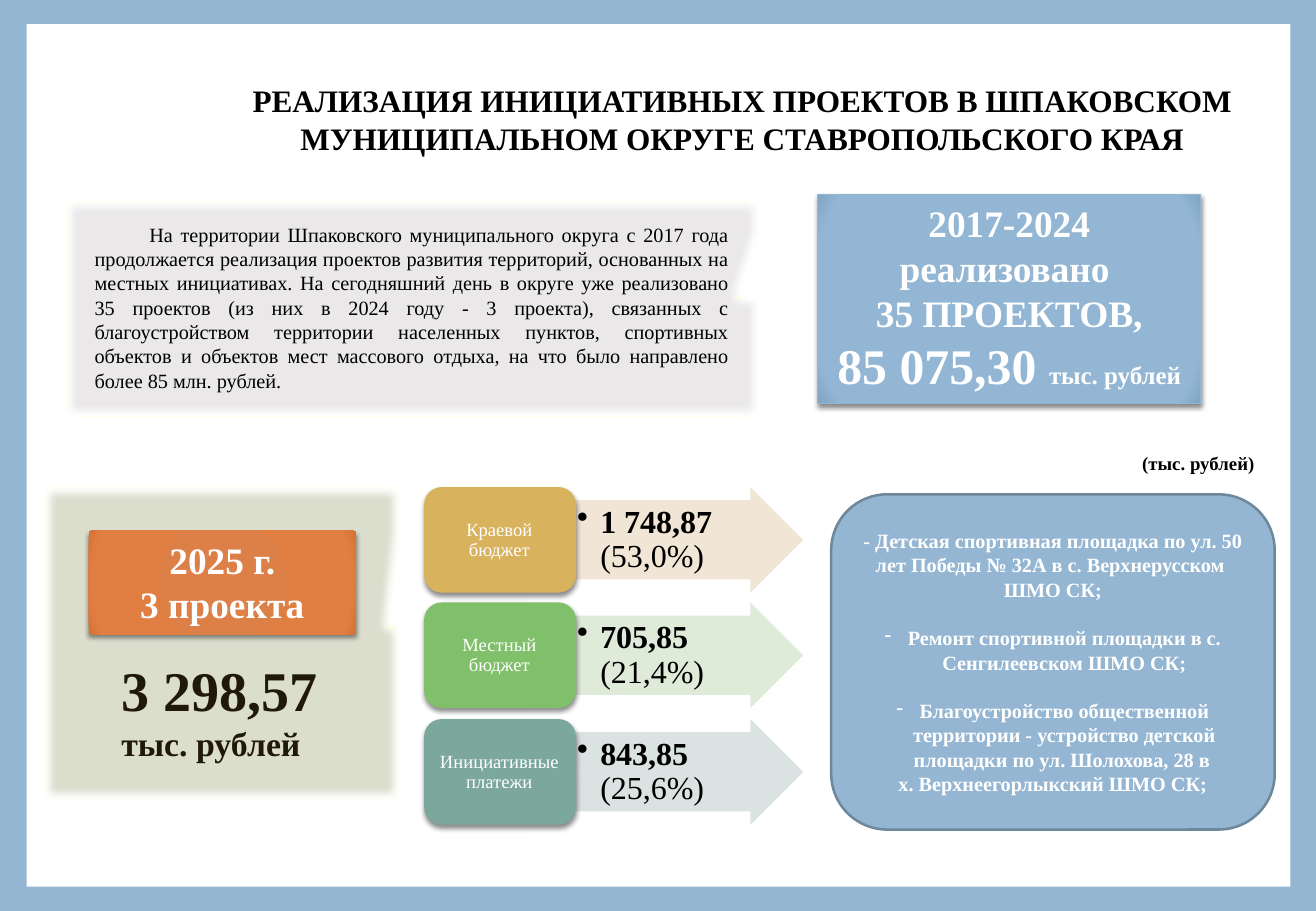
from dataclasses import dataclass

from lxml.etree import SubElement
from pptx import Presentation
from pptx.dml.color import RGBColor
from pptx.enum.shapes import MSO_SHAPE
from pptx.enum.text import MSO_ANCHOR, PP_ALIGN
from pptx.oxml import parse_xml
from pptx.oxml.ns import nsdecls, qn
from pptx.util import Emu, Pt

SCALE = 9144
FONT = "Times New Roman"
BLACK = RGBColor(0x00, 0x00, 0x00)
WHITE = RGBColor(0xFF, 0xFF, 0xFF)
YELLOW = RGBColor(0xFF, 0xFF, 0x00)
BROWN = RGBColor(0x20, 0x19, 0x0B)
BLUE = RGBColor(0x94, 0xB6, 0xD2)
BLUE_MIDDLE = RGBColor(0x92, 0xB6, 0xD4)
BLUE_DARK = RGBColor(0x81, 0xA6, 0xC4)
BLUE_BORDER = RGBColor(0x6D, 0x87, 0x9B)
ORANGE = RGBColor(0xDD, 0x80, 0x47)
ORANGE_MIDDLE = RGBColor(0xE1, 0x7F, 0x43)
ORANGE_DARK = RGBColor(0xD6, 0x71, 0x33)
GREY = RGBColor(0xEA, 0xE8, 0xE8)
OLIVE = RGBColor(0xDB, 0xDD, 0xCD)

SHADOW = ('<a:outerShdw blurRad="38100" dist="25400" dir="5400000" rotWithShape="0">'
          '<a:srgbClr val="000000"><a:alpha val="45000"/></a:srgbClr></a:outerShdw>')
SOFT_EDGE = '<a:softEdge rad="63500"/>'


@dataclass(frozen=True)
class Box:
    """Position and size in px."""
    left: int
    top: int
    width: int
    height: int

    def emu(self) -> list[Emu]:
        """Return the four lengths in EMU."""
        return [Emu(value * SCALE) for value in (self.left, self.top, self.width, self.height)]


@dataclass(frozen=True)
class Run:
    """A piece of text with its size and weight."""
    text: str
    size: float
    bold: bool = True


@dataclass(frozen=True)
class Line:
    """A paragraph with its indents, bullet and space before."""
    runs: tuple[Run, ...]
    margin: int = 0
    indent: int = 0
    bullet: str = ""
    before: float = 0


@dataclass(frozen=True)
class Budget:
    """A source of money with its amount, share and colours."""
    name: str
    amount: str
    share: str
    color: RGBColor
    arrow_color: RGBColor


BUDGETS = (
    Budget("Краевой бюджет", "1 748,87 ", "(53,0%)",
           RGBColor(0xD8, 0xB2, 0x5C), RGBColor(0xF0, 0xE4, 0xD2)),
    Budget("Местный бюджет", "705,85 ", "(21,4%)",
           RGBColor(0x81, 0xC0, 0x6B), RGBColor(0xDB, 0xE9, 0xD4)),
    Budget("Инициативные платежи", "843,85 ", "(25,6%)",
           RGBColor(0x7B, 0xA7, 0x9D), RGBColor(0xD7, 0xE1, 0xDF)),
)


def line(text: str, size: float, bold: bool = True, **layout) -> Line:
    """Make a paragraph of one run."""
    return Line((Run(text, size, bold),), **layout)


def write(shape, lines, *, color=BLACK, align=PP_ALIGN.LEFT, anchor=MSO_ANCHOR.TOP,
          insets=(10, 5), spacing=1.0) -> None:
    """Fill a shape with formatted paragraphs."""
    frame = shape.text_frame
    frame.word_wrap = True
    frame.vertical_anchor = anchor
    frame.margin_left = frame.margin_right = Emu(insets[0] * SCALE)
    frame.margin_top = frame.margin_bottom = Emu(insets[1] * SCALE)
    for index, item in enumerate(lines):
        paragraph = frame.add_paragraph() if index else frame.paragraphs[0]
        paragraph.alignment = align
        paragraph.line_spacing = spacing
        if item.before:
            paragraph.space_before = Pt(item.before)
        properties = paragraph._p.get_or_add_pPr()
        properties.set("marL", str(item.margin * SCALE))
        properties.set("indent", str(item.indent * SCALE))
        if item.bullet:
            SubElement(properties, qn("a:buChar")).set("char", item.bullet)
        for piece in item.runs:
            run = paragraph.add_run()
            run.text = piece.text
            run.font.name = FONT
            run.font.size = Pt(piece.size)
            run.font.bold = piece.bold
            run.font.color.rgb = color


def add_text(slide, box: Box, lines, **style) -> None:
    """Add a text box."""
    write(slide.shapes.add_textbox(*box.emu()), lines, **style)


def add_figure(slide, kind, box: Box, fill: RGBColor, *, border=None, border_width=1.5,
               adjustments=(), effect="", opacity=100):
    """Add a preset shape with its fill, border and effect."""
    shape = slide.shapes.add_shape(kind, *box.emu())
    for index, value in enumerate(adjustments):
        shape.adjustments[index] = value
    shape.fill.solid()
    shape.fill.fore_color.rgb = fill
    if opacity < 100:
        color = shape._element.spPr.find(qn("a:solidFill"))[0]
        SubElement(color, qn("a:alpha")).set("val", str(opacity * 1000))
    if border is None:
        shape.line.fill.background()
    else:
        shape.line.color.rgb = border
        shape.line.width = Pt(border_width)
    shape.shadow.inherit = False
    if effect:
        effects = shape._element.spPr.find(qn("a:effectLst"))
        effects.append(parse_xml(effect.replace(" ", f" {nsdecls('a')} ", 1)))
    return shape


def add_plaque(slide, box: Box, colors, lines, border=None) -> None:
    """Add a shadowed rectangle with a radial gradient and white text."""
    shape = add_figure(slide, MSO_SHAPE.RECTANGLE, box, colors[0], border=border,
                       border_width=0.79, effect=SHADOW)
    stops = "".join(f'<a:gs pos="{position}"><a:srgbClr val="{color}"/></a:gs>'
                    for position, color in zip((0, 90000, 100000), colors))
    gradient = parse_xml(
        f'<a:gradFill {nsdecls("a")} rotWithShape="1"><a:gsLst>{stops}</a:gsLst>'
        '<a:path path="circle"><a:fillToRect l="100000" t="100000" r="100000" b="100000"/>'
        '</a:path></a:gradFill>')
    properties = shape._element.spPr
    properties.replace(properties.find(qn("a:solidFill")), gradient)
    write(shape, lines, color=WHITE, align=PP_ALIGN.CENTER)


def add_budget(slide, budget: Budget, top: int) -> None:
    """Add one budget label with its arrow and amount."""
    add_figure(slide, MSO_SHAPE.RIGHT_ARROW, Box(474, top, 187, 87), budget.arrow_color,
               adjustments=(0.75, 0.5), opacity=90)
    amount = Line((Run(budget.amount, 19), Run(budget.share, 19, False)), 19, -19, "•")
    add_text(slide, Box(474, top + 11, 154, 65), [amount], anchor=MSO_ANCHOR.MIDDLE,
             insets=(1, 1), spacing=0.9)
    add_figure(slide, MSO_SHAPE.ROUNDED_RECTANGLE, Box(349, top, 125, 87), budget.color,
               effect=SHADOW)
    add_text(slide, Box(353, top + 5, 116, 78), [line(budget.name, 11, False)], color=WHITE,
             align=PP_ALIGN.CENTER, anchor=MSO_ANCHOR.MIDDLE, insets=(5, 2), spacing=0.9)


def main() -> None:
    """Build the slide and save it."""
    presentation = Presentation()
    presentation.slide_width, presentation.slide_height = Emu(1083 * SCALE), Emu(750 * SCALE)
    slide = presentation.slides.add_slide(presentation.slide_layouts[6])
    slide.background.fill.solid()
    slide.background.fill.fore_color.rgb = BLUE
    add_figure(slide, MSO_SHAPE.RECTANGLE, Box(22, 20, 1040, 710), WHITE)

    for box, color in ((Box(54, 165, 570, 178), GREY), (Box(36, 401, 293, 257), OLIVE)):
        add_figure(slide, MSO_SHAPE.RECTANGULAR_CALLOUT, box, color, border=YELLOW,
                   adjustments=(0.471, -0.049), effect=SOFT_EDGE)
    add_text(slide, Box(68, 178, 542, 151), [line(
        "На территории Шпаковского муниципального округа с 2017 года продолжается реализация "
        "проектов развития территорий, основанных на местных инициативах. На сегодняшний день "
        "в округе уже реализовано 35 проектов (из них в 2024 году - 3 проекта), связанных с "
        "благоустройством территории населенных пунктов, спортивных объектов и объектов мест "
        "массового отдыха, на что было направлено более 85 млн. рублей. ",
        12, False, indent=45)], align=PP_ALIGN.JUSTIFY)
    add_text(slide, Box(121, 62, 979, 71), [line(
        "РЕАЛИЗАЦИЯ ИНИЦИАТИВНЫХ ПРОЕКТОВ В ШПАКОВСКОМ "
        "МУНИЦИПАЛЬНОМ ОКРУГЕ СТАВРОПОЛЬСКОГО КРАЯ", 18.5)], align=PP_ALIGN.CENTER)

    add_plaque(slide, Box(673, 160, 315, 172), (BLUE, BLUE_MIDDLE, BLUE_DARK), [
        line("2017-2024", 22.1), line("реализовано ", 22.1), line("35 ПРОЕКТОВ,", 22.1),
        Line((Run("85 075,30 ", 29.5), Run("тыс. рублей", 14.8)))], border=BLUE)
    add_plaque(slide, Box(73, 437, 220, 85), (ORANGE, ORANGE_MIDDLE, ORANGE_DARK),
               [line("2025 г.", 22.1), line("3 проекта", 22.1)])
    add_text(slide, Box(90, 535, 203, 100),
             [line("3 298,57", 33.2), line("тыс. рублей", 20)], color=BROWN)

    for index, budget in enumerate(BUDGETS):
        add_budget(slide, budget, 401 + index * 191 // 2)

    add_text(slide, Box(930, 367, 122, 29), [line("(тыс. рублей)", 11.1)])
    projects = add_figure(slide, MSO_SHAPE.ROUNDED_RECTANGLE, Box(684, 407, 365, 276), BLUE,
                          border=BLUE_BORDER)
    dash = {"margin": 19, "indent": -19, "bullet": "-", "before": 14.4}
    write(projects, [
        line("- Детская спортивная площадка по ул. 50 лет Победы № 32А в с. Верхнерусском ", 12),
        line("ШМО СК;", 12),
        line("Ремонт спортивной площадки в с. Сенгилеевском ШМО СК;", 12, **dash),
        line("Благоустройство общественной территории - устройство детской площадки "
             "по ул. Шолохова, 28 в ", 12, **dash),
        line("х. Верхнеегорлыкский ШМО СК;", 12),
    ], color=WHITE, align=PP_ALIGN.CENTER, anchor=MSO_ANCHOR.MIDDLE)
    presentation.save("out.pptx")


if __name__ == "__main__":
    main()
